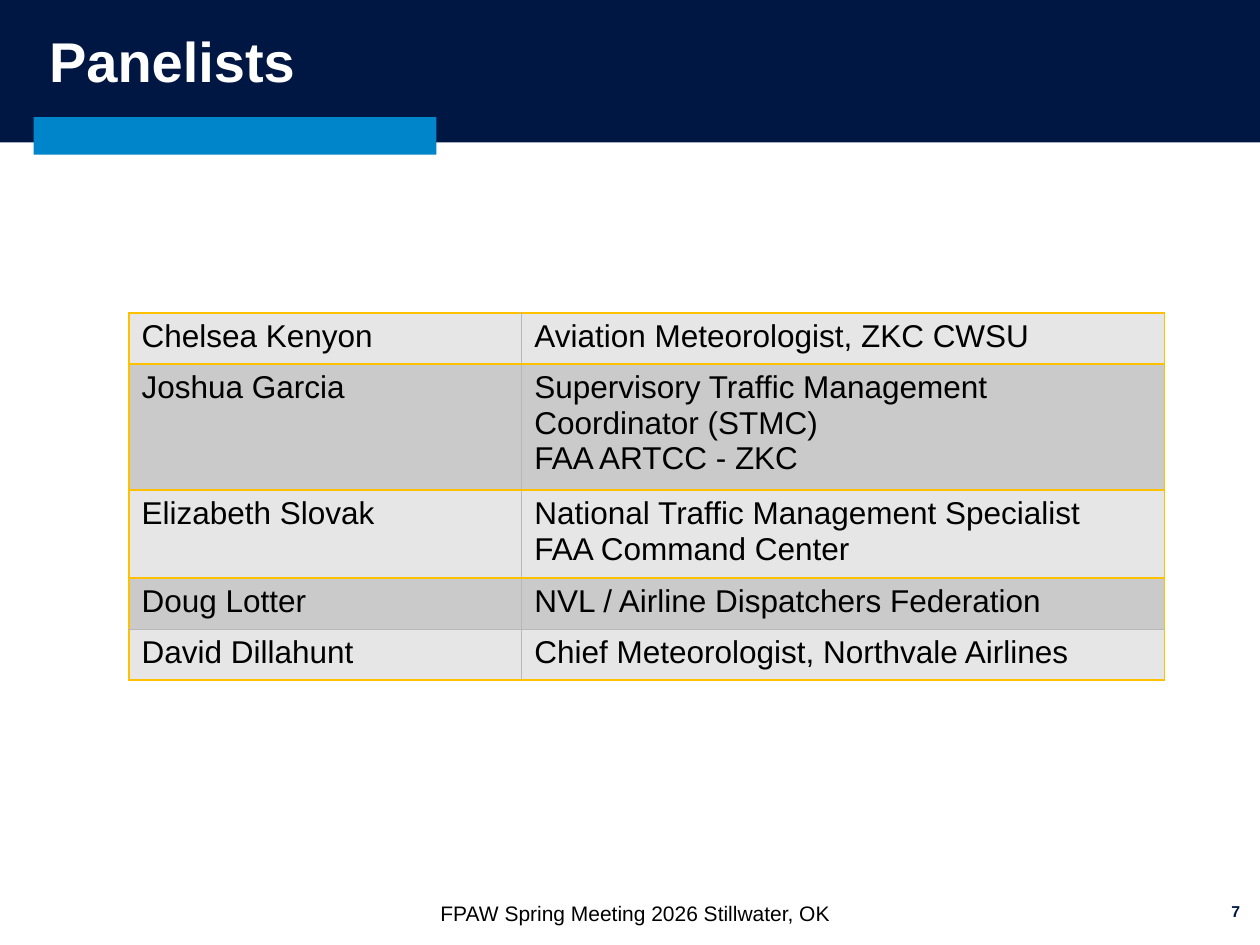
from lxml.etree import SubElement
from pptx import Presentation
from pptx.dml.color import RGBColor
from pptx.enum.shapes import MSO_SHAPE
from pptx.enum.text import MSO_ANCHOR, MSO_AUTO_SIZE, PP_ALIGN
from pptx.oxml.ns import qn
from pptx.util import Cm, Pt

NAVY = RGBColor(0x00, 0x17, 0x43)
BLUE = RGBColor(0x00, 0x85, 0xCA)
WHITE = RGBColor(0xFF, 0xFF, 0xFF)
BLACK = RGBColor(0x00, 0x00, 0x00)
GOLD = RGBColor(0xFF, 0xC0, 0x00)
GREY = RGBColor(0xB8, 0xB8, 0xB8)
ROW_FILLS = [RGBColor(0xE6, 0xE6, 0xE6), RGBColor(0xCA, 0xCA, 0xCA)]

PANELISTS = [
    ("Chelsea Kenyon", "Aviation Meteorologist, ZKC CWSU", 1.03),
    ("Joshua Garcia", "Supervisory Traffic Management Coordinator (STMC)\nFAA ARTCC - ZKC", 2.54),
    ("Elizabeth Slovak", "National Traffic Management Specialist\nFAA Command Center", 1.77),
    ("Doug Lotter", "NVL / Airline Dispatchers Federation", 1.03),
    ("David Dillahunt", "Chief Meteorologist, Northvale Airlines", 1.03),
]
COLUMN_WIDTHS = [7.92, 12.95]


def format_text(frame, size, color, bold=False, align=PP_ALIGN.LEFT):
    for para in frame.paragraphs:
        para.alignment = align
        para.font.name = "Arial"
        para.font.size = Pt(size)
        para.font.bold = bold
        para.font.color.rgb = color


def add_band(page, left, top, width, height, color):
    band = page.shapes.add_shape(
        MSO_SHAPE.RECTANGLE, Cm(left), Cm(top), Cm(width), Cm(height))
    band.shadow.inherit = False
    band.fill.solid()
    band.fill.fore_color.rgb = color
    band.line.fill.background()
    page.shapes.title.element.addprevious(band.element)


def set_title(page, text):
    title = page.shapes.title
    title.left, title.top, title.width, title.height = Cm(0.81), Cm(-0.08), Cm(24.2), Cm(2.77)
    frame = title.text_frame
    frame.text = text
    frame.auto_size = MSO_AUTO_SIZE.NONE
    frame.vertical_anchor = MSO_ANCHOR.MIDDLE
    frame.margin_left = frame.margin_right = Cm(0.18)
    frame.margin_top = frame.margin_bottom = Cm(0.1)
    frame.paragraphs[0].line_spacing = 0.9
    format_text(frame, 32, WHITE, bold=True)


def add_text(page, text, left, top, width, height, anchor, **style):
    box = page.shapes.add_textbox(Cm(left), Cm(top), Cm(width), Cm(height))
    frame = box.text_frame
    frame.word_wrap = True
    frame.vertical_anchor = anchor
    frame.text = text
    format_text(frame, **style)


def set_borders(cell, borders):
    properties = cell._tc.get_or_add_tcPr()
    for side, color in borders.items():
        width = Pt(1) if color == GOLD else Pt(0.5)
        line = SubElement(properties, qn(f"a:ln{side}"), w=str(width))
        fill = SubElement(line, qn("a:solidFill"))
        SubElement(fill, qn("a:srgbClr"), val=str(color))


def add_panelist_table(page, left, top):
    heights = [height for _, _, height in PANELISTS]
    table = page.shapes.add_table(
        len(PANELISTS), len(COLUMN_WIDTHS), Cm(left), Cm(top),
        Cm(sum(COLUMN_WIDTHS)), Cm(sum(heights))).table
    table.first_row = False
    table.horz_banding = False
    for column, width in zip(table.columns, COLUMN_WIDTHS):
        column.width = Cm(width)
    last = len(PANELISTS) - 1
    for index, (name, role, height) in enumerate(PANELISTS):
        table.rows[index].height = Cm(height)
        for side, text in enumerate((name, role)):
            cell = table.cell(index, side)
            cell.text = text
            format_text(cell.text_frame, 18, BLACK)
            set_borders(cell, {
                "L": GREY if side else GOLD,
                "R": GOLD if side else GREY,
                "T": GREY if index == last else GOLD,
                "B": GREY if index == last - 1 else GOLD,
            })
            cell.fill.solid()
            cell.fill.fore_color.rgb = ROW_FILLS[index % 2]


def main():
    deck = Presentation()
    deck.slide_width, deck.slide_height = Cm(25.4), Cm(19.05)
    page = deck.slides.add_slide(deck.slide_layouts[5])
    add_band(page, 0, 0, 25.4, 2.87, NAVY)
    add_band(page, 0.68, 2.36, 8.12, 0.76, BLUE)
    set_title(page, "Panelists")
    add_panelist_table(page, 2.6, 6.31)
    add_text(page, "FPAW Spring Meeting 2026 Stillwater, OK", 8.63, 18.03, 11.63, 0.77,
             MSO_ANCHOR.TOP, size=12, color=BLACK)
    add_text(page, "7", 19.53, 17.86, 5.72, 1.02,
             MSO_ANCHOR.MIDDLE, size=9, color=NAVY, bold=True, align=PP_ALIGN.RIGHT)
    deck.save("out.pptx")


if __name__ == "__main__":
    main()
